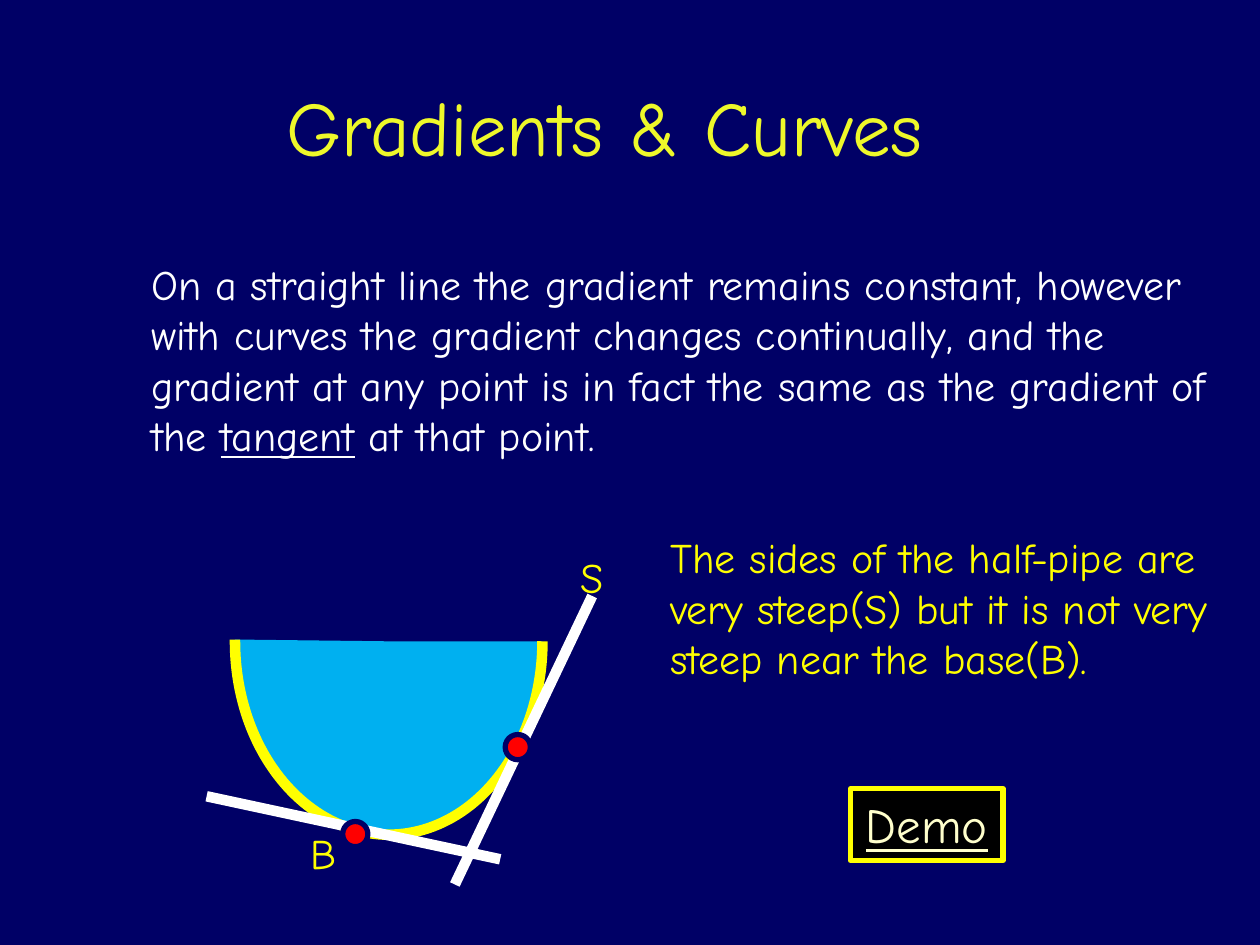
from collections import namedtuple
from dataclasses import dataclass

from lxml.etree import SubElement
from pptx import Presentation
from pptx.dml.color import RGBColor as Rgb
from pptx.enum.shapes import MSO_CONNECTOR as Conn, MSO_SHAPE as Kind
from pptx.enum.text import MSO_ANCHOR as Anchor, MSO_AUTO_SIZE as Fit, PP_ALIGN as Align
from pptx.oxml.ns import qn
from pptx.util import Inches, Pt

Box = namedtuple("Box", "x y w h")


@dataclass(frozen=True)
class Theme:
    """Hold the colours, font and type sizes."""
    font: str = "Comic Neue"
    navy: str = "000066"
    white: str = "FFFFFF"
    yellow: str = "FFFF00"
    lemon: str = "EEF82A"
    cream: str = "FFFFCC"
    water: str = "00B0F0"
    red: str = "FF0000"
    black: str = "000000"
    head: int = 44
    body: int = 24
    link: int = 28
    thick: int = 6
    thin: int = 3


LOOK = Theme()


def tint(code):
    """Turn a hex code into a colour."""
    return Rgb.from_string(code)


def place(item, box):
    """Move an item to a box."""
    item.left, item.top, item.width, item.height = map(Inches, box)


def write(item, *parts, size=LOOK.body, color=LOOK.yellow, align=Align.LEFT,
          wrap=True, fit=Fit.SHAPE_TO_FIT_TEXT, anchor=Anchor.TOP, under=()):
    """Write the parts as one paragraph, underlining those in under."""
    frame = item.text_frame
    frame.word_wrap = wrap
    frame.auto_size = fit
    frame.vertical_anchor = anchor
    para = frame.paragraphs[0]
    para.alignment = align
    for part in parts:
        run = para.add_run()
        run.text = part
        font = run.font
        font.name, font.size, font.underline = LOOK.font, Pt(size), part in under
        font.color.rgb = tint(color)


def note(slide, box, *parts, **style):
    """Add a text box."""
    item = slide.shapes.add_textbox(*map(Inches, box))
    write(item, *parts, **style)


def shape(slide, kind, box, fill, line, width):
    """Add a filled and outlined shape."""
    item = slide.shapes.add_shape(kind, *map(Inches, box))
    item.shadow.inherit = False
    item.fill.solid()
    item.fill.fore_color.rgb = tint(fill)
    item.line.color.rgb = tint(line)
    item.line.width = Pt(width)
    return item


def title(slide, box):
    """Fill the title placeholder."""
    item = slide.shapes.title
    place(item, box)
    write(item, "Gradients & Curves", size=LOOK.head, color=LOOK.lemon, fit=Fit.NONE)


def tangent(slide, box, start, end, dot):
    """Draw a tangent and its point of contact within the box."""
    ends = [Inches(base + step) for point in (start, end)
            for base, step in zip(box[:2], point)]
    line = slide.shapes.add_connector(Conn.STRAIGHT, *ends)
    line.line.color.rgb = tint(LOOK.white)
    line.line.width = Pt(LOOK.thick)
    SubElement(line._element.spPr, qn("a:effectLst"))
    spot = Box(box.x + dot[0], box.y + dot[1], 0.2, 0.2)
    shape(slide, Kind.OVAL, spot, LOOK.red, LOOK.navy, LOOK.thin)


def pipe(slide, box):
    """Draw the half-pipe with its two tangents and labels."""
    for text, x, y, w in (("B", 0.82, 2.32, 0.5), ("S", 2.91, 0.13, 0.58)):
        note(slide, Box(box.x + x, box.y + y, w, 0.51), text, align=Align.CENTER)
    bowl = shape(slide, Kind.ARC, Box(box.x + 0.05, box.y - 0.33, 3.07, 2.44),
                 LOOK.water, LOOK.yellow, LOOK.thick)
    bowl.rotation = 90
    bowl.adjustments[0], bowl.adjustments[1] = 162, 54.39
    tangent(slide, box, (3.2, 0.53), (2.11, 2.82), (2.51, 1.63))
    tangent(slide, box, (0.14, 2.12), (2.47, 2.62), (1.22, 2.32))


def button(slide, box):
    """Add the framed demo button."""
    item = shape(slide, Kind.RECTANGLE, box, LOOK.black, LOOK.yellow, LOOK.thin)
    write(item, "Demo", size=LOOK.link, color=LOOK.cream, align=Align.CENTER,
          wrap=False, under=("Demo",))


def main():
    """Build and save the slide."""
    deck = Presentation()
    deck.slide_width, deck.slide_height = Inches(10), Inches(7.5)
    slide = deck.slides.add_slide(deck.slide_layouts[5])
    back = slide.background.fill
    back.solid()
    back.fore_color.rgb = tint(LOOK.navy)
    title(slide, Box(2.17, 0.58, 6, 1.25))
    note(slide, Box(1.1, 2, 8.62, 1.72),
         "On a straight line the gradient remains constant, however with curves "
         "the gradient changes continually, and the gradient at any point is in "
         "fact the same as the gradient of the ", "tangent", " at that point.",
         color=LOOK.white, under=("tangent",))
    note(slide, Box(5.22, 4.17, 4.58, 1.72),
         "The sides of the half-pipe are very steep(S) but it is not very steep "
         "near the base(B).")
    pipe(slide, Box(1.5, 4.2, 3.5, 2.85))
    button(slide, Box(6.75, 6.26, 1.21, 0.57))
    deck.save("out.pptx")


if __name__ == "__main__":
    main()
